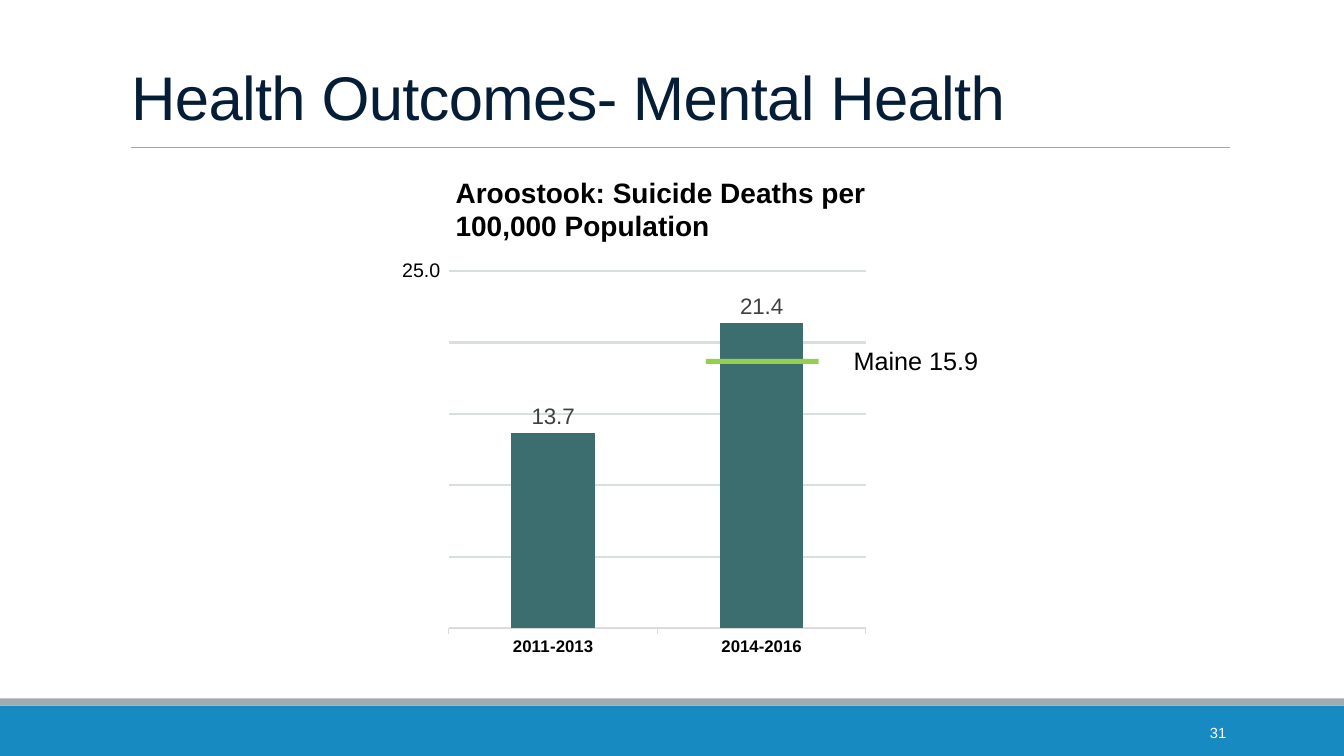
from lxml import etree
from pptx import Presentation
from pptx.chart.data import CategoryChartData
from pptx.dml.color import RGBColor
from pptx.enum import chart as ch, shapes, text
from pptx.oxml import ns
from pptx.util import Inches, Pt

FONT = "Arial"
LEFT, CENTER, RIGHT = text.PP_ALIGN.LEFT, text.PP_ALIGN.CENTER, text.PP_ALIGN.RIGHT


def rgb(value):
    """Turn a hex string into a colour."""
    return RGBColor.from_string(value)


def style(font, size, color, bold=False):
    """Set the face, size, colour and weight of a font."""
    font.name, font.size, font.bold = FONT, Pt(size), bold
    font.color.rgb = rgb(color)


def add_bar(s, box, color):
    """Add a plain filled rectangle."""
    sp = s.shapes.add_shape(shapes.MSO_SHAPE.RECTANGLE, *map(Inches, box))
    sp.shadow.inherit = False
    sp.fill.solid()
    sp.fill.fore_color.rgb = rgb(color)
    sp.line.fill.background()


def add_rule(s, x1, x2, y, color, width):
    """Add a thin horizontal line."""
    ln = s.shapes.add_connector(shapes.MSO_CONNECTOR.STRAIGHT,
                                Inches(x1), Inches(y), Inches(x2), Inches(y))
    ln.line.color.rgb = rgb(color)
    ln.line.width = Pt(width)
    etree.SubElement(ln._element.spPr, ns.qn("a:effectLst"))


def add_text(s, box, lines, size, color="000000", bold=False, align=LEFT,
             anchor=text.MSO_ANCHOR.TOP):
    """Add a text box with one paragraph per line."""
    tf = s.shapes.add_textbox(*map(Inches, box)).text_frame
    tf.word_wrap = True
    tf.vertical_anchor = anchor
    for i, line in enumerate(lines):
        p = tf.add_paragraph() if i else tf.paragraphs[0]
        p.alignment = align
        r = p.add_run()
        r.text = line
        style(r.font, size, color, bold)


def set_title(s, title):
    """Place and format the title placeholder."""
    sp = s.shapes.title
    sp.left, sp.top, sp.width, sp.height = map(Inches, (1.2, 0.31, 11, 1.06))
    tf = sp.text_frame
    tf.auto_size = text.MSO_AUTO_SIZE.NONE
    tf.vertical_anchor = text.MSO_ANCHOR.BOTTOM
    p = tf.paragraphs[0]
    p.alignment, p.line_spacing = LEFT, 0.85
    r = p.add_run()
    r.text = title
    style(r.font, 44, "061D38")
    r._r.get_or_add_rPr().set("spc", "-50")


def set_plot_layout(chart, x, y, w, h):
    """Fix the inner plot area as fractions of the chart."""
    area = chart._chartSpace.chart.plotArea
    for old in area.findall(ns.qn("c:layout")):
        area.remove(old)
    layout = etree.Element(ns.qn("c:layout"))
    manual = etree.SubElement(layout, ns.qn("c:manualLayout"))
    values = [("layoutTarget", "inner"), ("xMode", "edge"), ("yMode", "edge"),
              ("x", x), ("y", y), ("w", w), ("h", h)]
    for tag, value in values:
        etree.SubElement(manual, ns.qn(f"c:{tag}")).set("val", str(value))
    area.insert(0, layout)


def label_points(series, labels):
    """Write a rate above each column."""
    for i, label in enumerate(labels):
        dl = series.points[i].data_label
        r = dl.text_frame.paragraphs[0].add_run()
        r.text = label
        style(r.font, 16, "404040")
        dl.position = ch.XL_LABEL_POSITION.OUTSIDE_END


def add_rate_chart(s, box, periods, heights, labels):
    """Add the column chart, with heights relative to the latest period."""
    data = CategoryChartData(number_format="0")
    data.categories = periods
    data.add_series("Series 1", heights)
    chart = s.shapes.add_chart(ch.XL_CHART_TYPE.COLUMN_CLUSTERED,
                               *map(Inches, box), data).chart
    chart.has_legend = chart.has_title = False
    style(chart.font, 10, "000000")
    set_plot_layout(chart, 0.067, 0.04, 0.862, 0.886)

    cat = chart.category_axis
    cat.major_tick_mark = ch.XL_TICK_MARK.OUTSIDE
    cat.format.line.color.rgb = rgb("D9D9D9")
    cat.format.line.width = Pt(0.75)
    style(cat.tick_labels.font, 12, "000000", True)

    val = chart.value_axis
    val.minimum_scale, val.maximum_scale, val.major_unit = 0, 117, 23.4
    val.has_major_gridlines = True
    val.major_gridlines.format.line.color.rgb = rgb("D9DEE0")
    val.major_gridlines.format.line.width = Pt(1.5)
    val.tick_labels.number_format = "0.00%"
    val.tick_labels.number_format_is_linked = False
    val.visible = False

    plot = chart.plots[0]
    plot.gap_width, plot.vary_by_categories = 150, False
    fill = plot.series[0].format.fill
    fill.solid()
    fill.fore_color.rgb = rgb("3C6E6F")
    label_points(plot.series[0], labels)


def main():
    """Build the slide and save it."""
    prs = Presentation()
    prs.slide_width, prs.slide_height = Inches(13.33), Inches(7.5)
    s = prs.slides.add_slide(prs.slide_layouts[5])
    add_bar(s, (0, 7, 13.33, 0.5), "178AC1")
    add_bar(s, (0, 6.93, 13.33, 0.07), "9FADB1")
    add_rule(s, 1.3, 12.2, 1.46, "A6A6A6", 0.5)
    set_title(s, "Health Outcomes- Mental Health")
    add_text(s, (10.83, 7.07, 1.43, 0.4), ["31"], 10.5, "FFFFFF",
             align=RIGHT, anchor=text.MSO_ANCHOR.MIDDLE)
    add_text(s, (3.89, 2.51, 1.06, 0.34), ["25.0"], 14)
    add_rate_chart(s, (4.13, 2.53, 4.8, 4), ["2011-2013", "2014-2016"],
                   [64, 100], ["13.7", "21.4"])
    add_bar(s, (7, 3.56, 1.12, 0.05), "94CF4F")
    add_text(s, (7.7, 3.38, 2.77, 0.36), ["Maine 15.9"], 18, align=CENTER)
    add_text(s, (4.42, 1.69, 6.63, 1.18),
             ["Aroostook: Suicide Deaths per", "100,000 Population"], 20, bold=True)
    prs.save("out.pptx")


if __name__ == "__main__":
    main()
